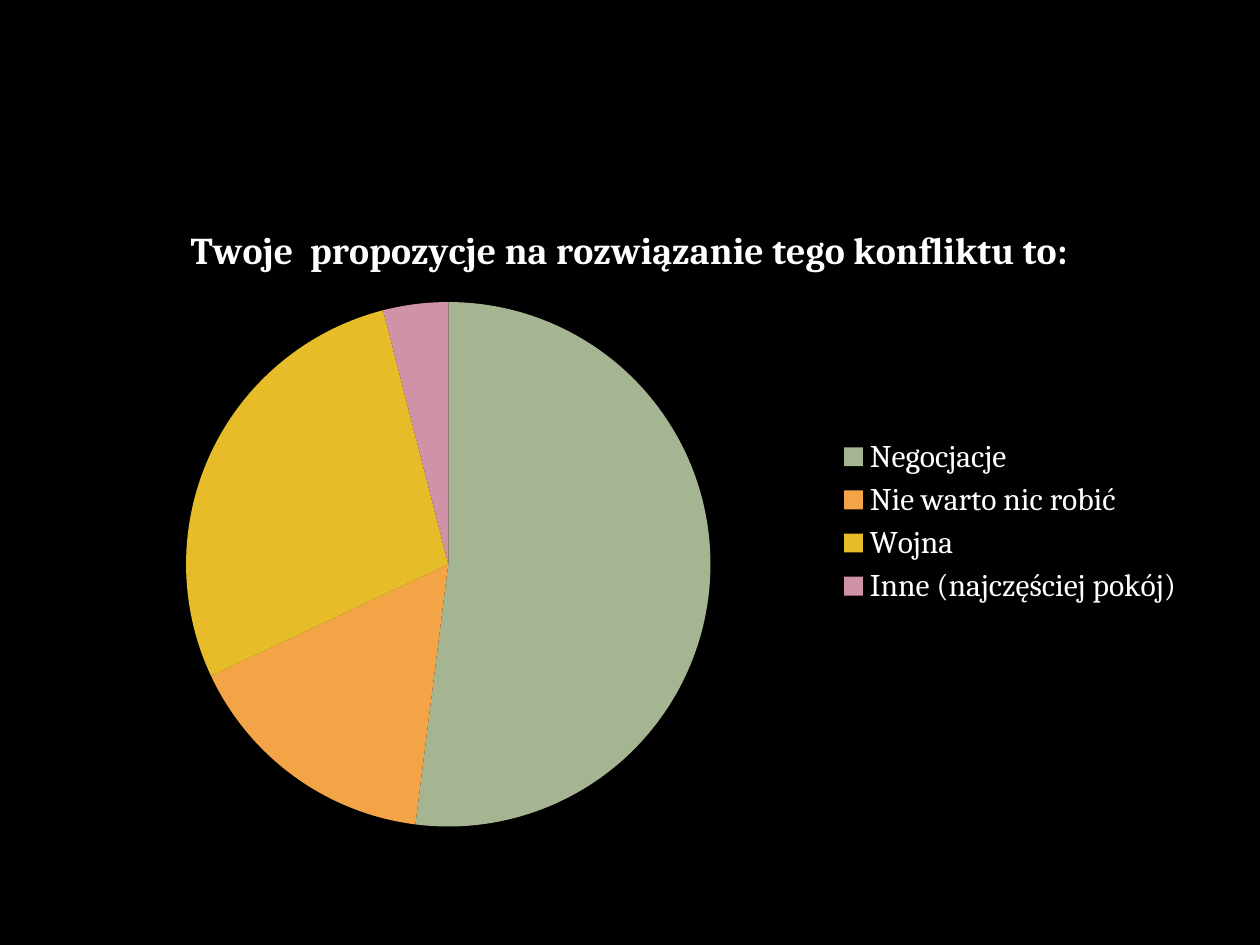
import pptx
import pptx.chart.data
import pptx.dml.color
import pptx.enum.chart
import pptx.util

RGBColor = pptx.dml.color.RGBColor
BLACK = RGBColor(0x00, 0x00, 0x00)
WHITE = RGBColor(0xFF, 0xFF, 0xFF)
SAGE = RGBColor(0xA5, 0xB5, 0x92)
ORANGE = RGBColor(0xF3, 0xA4, 0x47)
YELLOW = RGBColor(0xE7, 0xBC, 0x29)
PINK = RGBColor(0xD0, 0x92, 0xA7)

FONT = "Cambria"
EMU_PER_PX = 914400 // 126
SLIDE_SIZE = (1260, 945)
CHART_BOX = (63, 199, 1134, 645)

QUESTION = "Twoje  propozycje na rozwiązanie tego konfliktu to:"
ANSWERS = [
    ("Negocjacje", 52, SAGE),
    ("Nie warto nic robić", 16, ORANGE),
    ("Wojna", 28, YELLOW),
    ("Inne (najczęściej pokój)", 4, PINK),
]


def px(length):
    return pptx.util.Emu(length * EMU_PER_PX)


def style_font(font, size, bold=False):
    font.name = FONT
    font.size = pptx.util.Pt(size)
    font.bold = bold
    font.color.rgb = WHITE


def add_answers_pie(slide, box):
    survey = pptx.chart.data.CategoryChartData()
    survey.categories = [answer for answer, _, _ in ANSWERS]
    survey.add_series(QUESTION, [share for _, share, _ in ANSWERS])
    pie = slide.shapes.add_chart(
        pptx.enum.chart.XL_CHART_TYPE.PIE, *map(px, box), survey
    ).chart
    style_font(pie.font, 18)

    pie.has_title = True
    question = pie.chart_title.text_frame
    question.text = QUESTION
    style_font(question.paragraphs[0].font, 21.6, bold=True)
    pie.chart_title.include_in_layout = False

    pie.has_legend = True
    pie.legend.position = pptx.enum.chart.XL_LEGEND_POSITION.RIGHT
    pie.legend.include_in_layout = False
    style_font(pie.legend.font, 18)

    plot = pie.plots[0]
    plot.vary_by_categories = True
    for index, (_, _, color) in enumerate(ANSWERS):
        fill = plot.series[0].points[index].format.fill
        fill.solid()
        fill.fore_color.rgb = color


def main():
    deck = pptx.Presentation()
    deck.slide_width, deck.slide_height = map(px, SLIDE_SIZE)
    slide = deck.slides.add_slide(deck.slide_layouts.get_by_name("Blank"))
    slide.background.fill.solid()
    slide.background.fill.fore_color.rgb = BLACK
    add_answers_pie(slide, CHART_BOX)
    deck.save("out.pptx")


if __name__ == "__main__":
    main()
